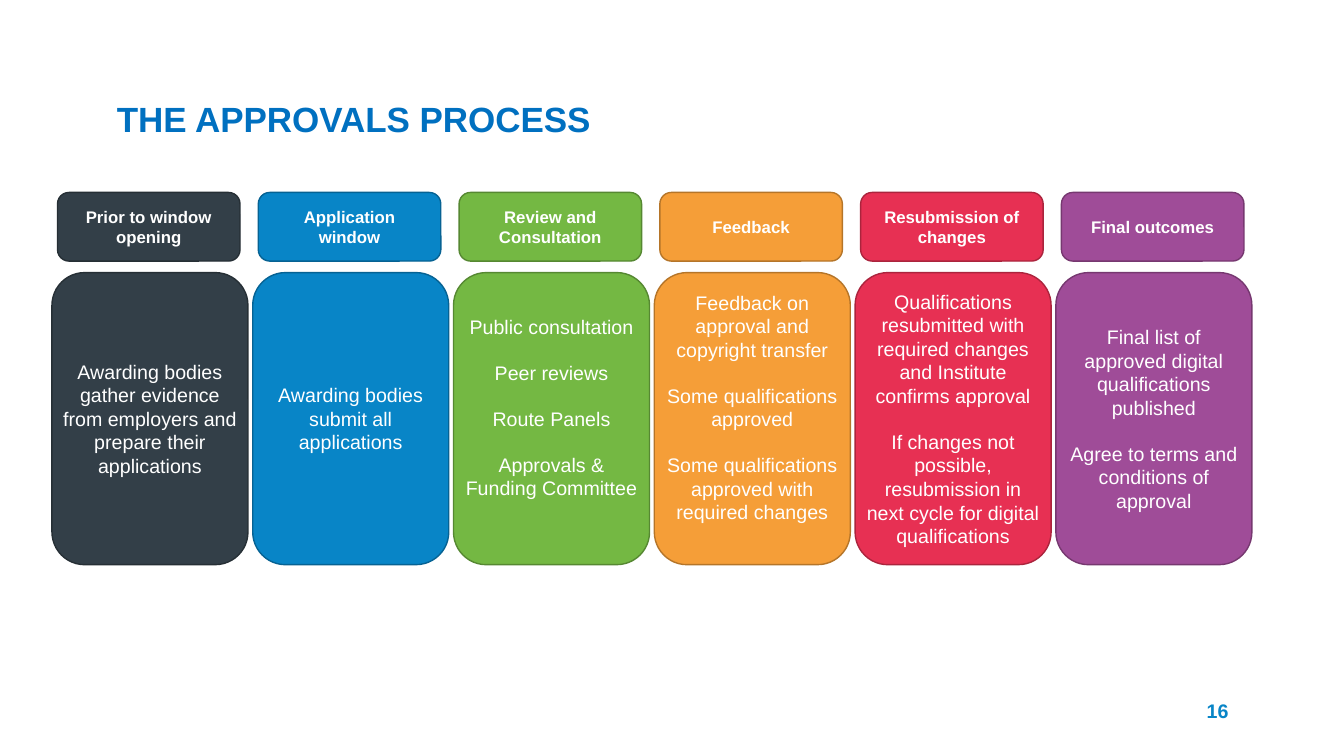
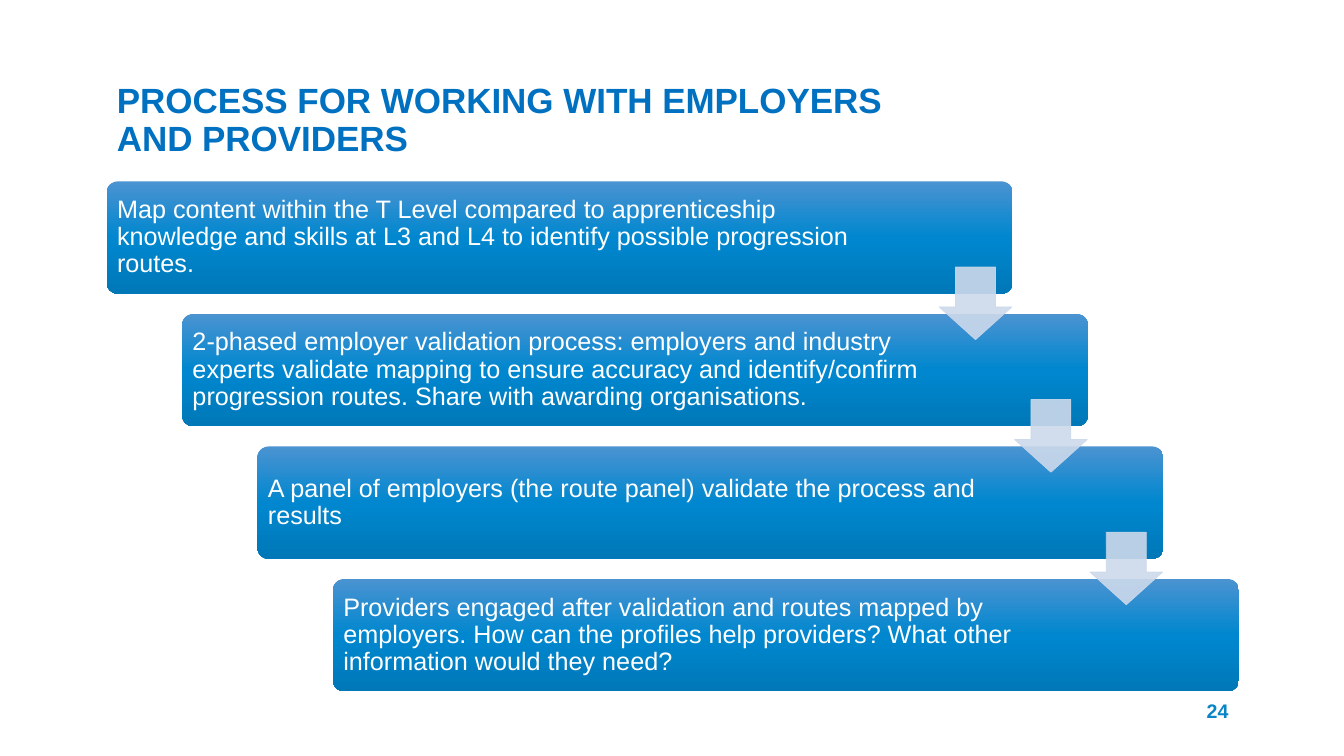
"""Build two slides on qualification approvals and partner engagement."""
from copy import deepcopy
from dataclasses import dataclass

from lxml import etree
from pptx import Presentation
from pptx.dml.color import RGBColor
from pptx.enum.shapes import MSO_SHAPE
from pptx.enum.text import MSO_ANCHOR, MSO_AUTO_SIZE, PP_ALIGN
from pptx.oxml.ns import qn
from pptx.util import Cm, Pt

ROUND = MSO_SHAPE.ROUNDED_RECTANGLE
DOWN = MSO_SHAPE.DOWN_ARROW
MIDDLE = MSO_ANCHOR.MIDDLE
FIXED = MSO_AUTO_SIZE.NONE
LEFT, CENTER, RIGHT = PP_ALIGN.LEFT, PP_ALIGN.CENTER, PP_ALIGN.RIGHT
TITLE_ONLY = 5


@dataclass(frozen=True)
class Theme:
    """Colours and type sizes shared by the slides."""
    font: str = "Arial"
    title: str = "0070C0"
    page: str = "0885C7"
    light: str = "FFFFFF"
    arrow: str = "CCD9EB"
    blend: tuple = ((0, "4B93D1"), (0.5, "0087CF"), (1, "0078B8"))
    title_size: int = 25
    step_size: int = 18
    body_size: int = 14
    head_size: int = 12


THEME = Theme()

STAGES = [
    ("Prior to window opening", "333F48", "262F35", 0,
     ["Awarding bodies gather evidence from employers and prepare their applications"]),
    ("Application window", "0885C7", "066293", 0,
     ["Awarding bodies submit all applications"]),
    ("Review and Consultation", "74B843", "568832", 0.57,
     ["Public consultation", "Peer reviews", "Route Panels",
      "Approvals & Funding Committee"]),
    ("Feedback", "F59E38", "B57529", 0.57,
     ["Feedback on approval and copyright transfer",
      "Some qualifications approved",
      "Some qualifications approved with required changes"]),
    ("Resubmission of changes", "E73053", "AB243D", 0,
     ["Qualifications resubmitted with required changes and Institute confirms approval",
      "If changes not possible, resubmission in next cycle for digital qualifications"]),
    ("Final outcomes", "9F4C98", "763870", 0,
     ["Final list of approved digital qualifications published",
      "Agree to terms and conditions of approval"]),
]

STEPS = [
    "Map content within the T Level compared to apprenticeship knowledge and skills "
    "at L3 and L4 to identify possible progression routes.",
    "2-phased employer validation process: employers and industry experts validate "
    "mapping to ensure accuracy and identify/confirm progression routes. "
    "Share with awarding organisations.",
    "A panel of employers (the route panel) validate the process and results",
    "Providers engaged after validation and routes mapped by employers. How can the "
    "profiles help providers? What other information would they need?",
]


def color(code):
    """Turn a hex code into a colour."""
    return RGBColor.from_string(code)


def place(left, top, width, height):
    """Turn centimetres into lengths."""
    return Cm(left), Cm(top), Cm(width), Cm(height)


def write(shape, texts, size, ink=THEME.light, bold=False, align=CENTER,
          space=None, gap=0, inset=None):
    """Fill a shape with paragraphs of one style."""
    frame = shape.text_frame
    frame.word_wrap = True
    frame.auto_size = FIXED
    frame.vertical_anchor = MIDDLE
    if inset:
        (frame.margin_left, frame.margin_top,
         frame.margin_right, frame.margin_bottom) = place(*inset)
    for index, text in enumerate(texts):
        para = frame.add_paragraph() if index else frame.paragraphs[0]
        para.text = text
        para.alignment = align
        para.line_spacing = space
        if index:
            para.space_before = Pt(gap)
        font = para.font
        font.name = THEME.font
        font.size = Pt(size)
        font.bold = bold
        font.color.rgb = color(ink)


def add_box(slide, kind, box, fill=None, edge=None, width=1, adjust=()):
    """Add a preset shape, filled and outlined when colours are given."""
    shape = slide.shapes.add_shape(kind, *place(*box))
    shape.shadow.inherit = False
    for index, value in enumerate(adjust):
        shape.adjustments[index] = value
    if fill:
        shape.fill.solid()
        shape.fill.fore_color.rgb = color(fill)
    if edge:
        shape.line.color.rgb = color(edge)
        shape.line.width = Pt(width)
    else:
        shape.line.fill.background()
    return shape


def blend(shape):
    """Give a shape the theme's three-stop gradient from top to bottom."""
    fill = shape.fill
    fill.gradient()
    fill.gradient_angle = 270
    stops = next(shape._element.spPr.iter(qn("a:gsLst")))
    stops.insert(1, deepcopy(stops[0]))
    for stop, (spot, code) in zip(fill.gradient_stops, THEME.blend):
        stop.position = spot
        stop.color.rgb = color(code)


def fade(shape, share):
    """Make the fill and line of a shape partly transparent."""
    for tint in shape._element.spPr.iter(qn("a:srgbClr")):
        etree.SubElement(tint, qn("a:alpha")).set("val", str(share * 1000))


def add_slide(deck, title, page):
    """Add a slide with its title and page number."""
    slide = deck.slides.add_slide(deck.slide_layouts[TITLE_ONLY])
    head = slide.shapes.title
    head.left, head.top, head.width, head.height = place(2.69, 1.22, 21.41, 3.68)
    write(head, [title], THEME.title_size, THEME.title, True, LEFT, 0.9)
    foot = slide.shapes.add_textbox(*place(29.03, 17.4, 2.18, 1.02))
    write(foot, [page], THEME.body_size, THEME.page, True, RIGHT)
    return slide


def add_stage(slide, index, head, fill, edge, lift, notes):
    """Add one column: a heading box above a body box."""
    shift = index * 5.06
    top = add_box(slide, ROUND, (1.45 + shift, 4.85, 4.6, 1.73), fill, edge)
    write(top, [head], THEME.head_size, bold=True)
    body = add_box(slide, ROUND, (1.31 + shift, 6.87, 4.94, 7.36), fill, edge)
    write(body, notes, THEME.body_size, gap=16, inset=(0, 0, 0, lift))


def add_step(slide, left, top, text):
    """Add one box of the staircase."""
    step = add_box(slide, ROUND, (left, top, 22.83, 2.83), adjust=[0.1])
    blend(step)
    write(step, [text], THEME.step_size, align=LEFT, space=0.9,
          inset=(0.18, 0.18, 3.85, 0.18))


def add_arrow(slide, left, top):
    """Add a pale arrow that leads to the next step."""
    arrow = add_box(slide, DOWN, (left, top, 1.83, 1.83), THEME.arrow,
                    THEME.arrow, 0.5, [0.55, 0.45])
    fade(arrow, 90)


def main():
    """Build and save the deck."""
    deck = Presentation()
    deck.slide_width, deck.slide_height = Cm(33.87), Cm(19.05)

    slide = add_slide(deck, "THE APPROVALS PROCESS", "16")
    for index, stage in enumerate(STAGES):
        add_stage(slide, index, *stage)

    slide = add_slide(deck, "PROCESS FOR WORKING WITH EMPLOYERS AND PROVIDERS", "24")
    spots = [(2.69 + 1.9 * index, 4.57 + 3.34 * index) for index in range(len(STEPS))]
    for (left, top), text in zip(spots, STEPS):
        add_step(slide, left, top, text)
    for left, top in spots[:-1]:
        add_arrow(slide, left + 20.98, top + 2.16)

    deck.save("out.pptx")


if __name__ == "__main__":
    main()
